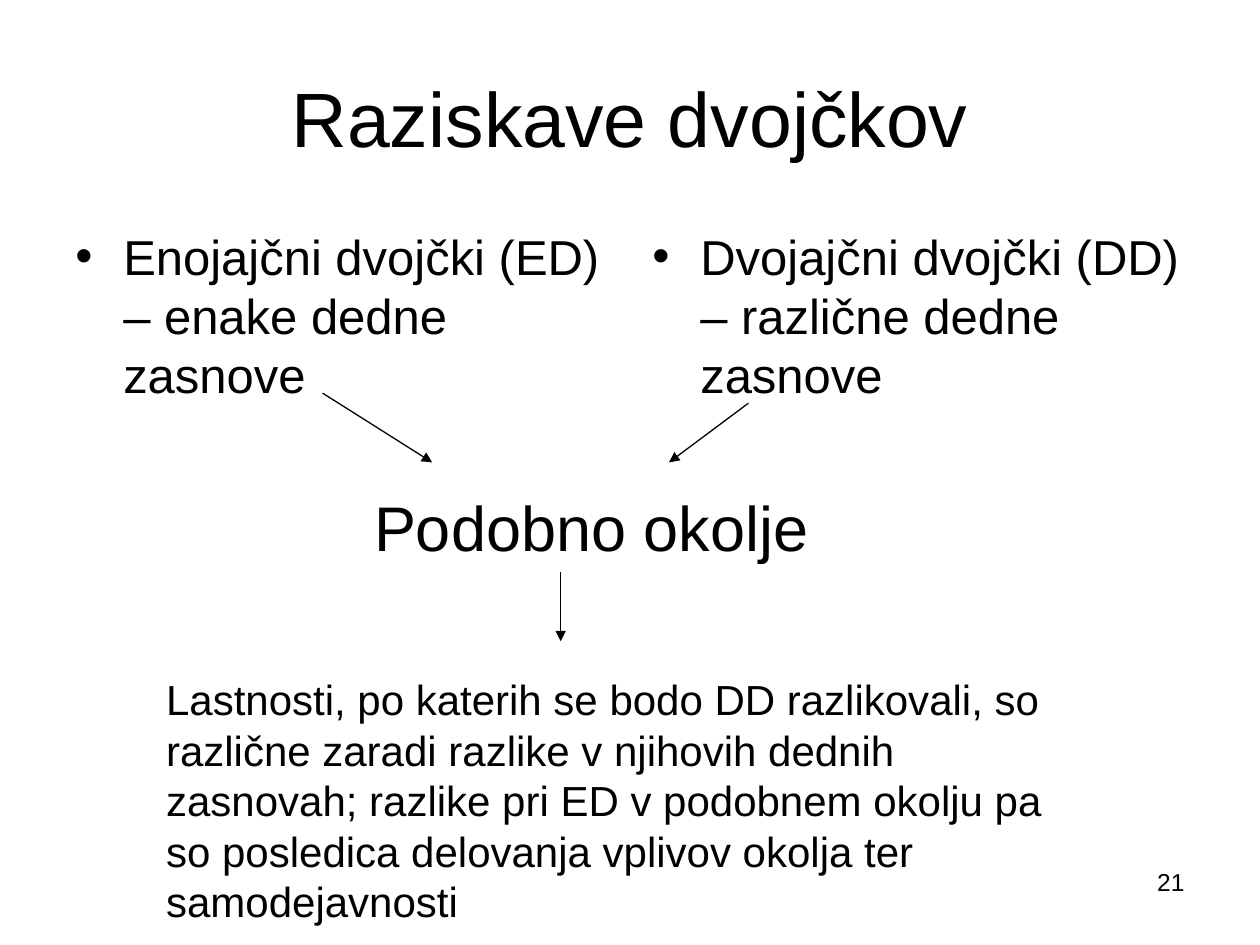
from lxml.etree import SubElement
from pptx import Presentation
from pptx.dml.color import RGBColor
from pptx.enum.shapes import MSO_CONNECTOR
from pptx.enum.text import MSO_ANCHOR, MSO_AUTO_SIZE, PP_ALIGN
from pptx.oxml.ns import qn
from pptx.util import Pt

PX = 9144
BLACK = "000000"


def px(*lengths):
    return [length * PX for length in lengths]


def color(hex_value):
    return RGBColor.from_string(hex_value)


def write(holder, text, size, align=PP_ALIGN.LEFT, wrap=True):
    frame = holder.text_frame
    frame.word_wrap = wrap
    frame.text = text
    paragraph = frame.paragraphs[0]
    paragraph.alignment = align
    paragraph.font.name = "Arial"
    paragraph.font.size = Pt(size)
    paragraph.font.color.rgb = color(BLACK)
    return paragraph


def add_title(slide, box, text):
    title = slide.shapes.title
    title.left, title.top, title.width, title.height = px(*box)
    write(title, text, 44, PP_ALIGN.CENTER)
    title.text_frame.vertical_anchor = MSO_ANCHOR.MIDDLE


def add_text(slide, box, text, size, align=PP_ALIGN.LEFT, wrap=True):
    holder = slide.shapes.add_textbox(*px(*box))
    paragraph = write(holder, text, size, align, wrap)
    holder.text_frame.auto_size = MSO_AUTO_SIZE.NONE
    return paragraph


def add_bullet(slide, box, text):
    properties = add_text(slide, box, text, 28)._p.get_or_add_pPr()
    indent = 38 * PX
    properties.set("marL", str(indent))
    properties.set("indent", str(-indent))
    SubElement(properties, qn("a:buFont")).set("typeface", "Arial")
    bullet = SubElement(properties, qn("a:buChar"))
    bullet.set("char", "•")
    defaults = properties.find(qn("a:defRPr"))
    if defaults is not None:
        properties.append(defaults)


def add_twin_types(slide, box, descriptions, gap):
    left, top, width, height = box
    column = (width - gap) // 2
    for index, description in enumerate(descriptions):
        add_bullet(slide, (left + index * (column + gap), top, column, height), description)


def add_arrow(slide, start, end):
    arrow = slide.shapes.add_connector(MSO_CONNECTOR.STRAIGHT, *px(*start, *end))
    arrow.line.color.rgb = color(BLACK)
    arrow.line.width = Pt(0.75)
    SubElement(arrow.line._get_or_add_ln(), qn("a:tailEnd")).set("type", "triangle")
    SubElement(arrow._element.spPr, qn("a:effectLst"))


def main():
    presentation = Presentation()
    presentation.slide_width, presentation.slide_height = px(1000, 750)
    slide = presentation.slides.add_slide(presentation.slide_layouts[5])

    add_title(slide, (50, 30, 900, 125), "Raziskave dvojčkov")
    add_twin_types(
        slide,
        (50, 175, 900, 184),
        (
            "Enojajčni dvojčki (ED) – enake dedne zasnove",
            "Dvojajčni dvojčki (DD) – različne dedne zasnove",
        ),
        gap=16,
    )
    add_text(slide, (287, 383, 365, 70), "Podobno okolje", 36, wrap=False)
    for start, end in (
        ((256, 312), (343, 367)),
        ((594, 320), (531, 367)),
        ((445, 454), (445, 509)),
    ):
        add_arrow(slide, start, end)
    add_text(
        slide,
        (122, 530, 740, 210),
        "Lastnosti, po katerih se bodo DD razlikovali, so različne zaradi razlike "
        "v njihovih dednih zasnovah; razlike pri ED v podobnem okolju pa so "
        "posledica delovanja vplivov okolja ter samodejavnosti",
        24,
    )
    add_text(slide, (717, 683, 233, 52), "21", 14, PP_ALIGN.RIGHT)
    presentation.save("out.pptx")


if __name__ == "__main__":
    main()
